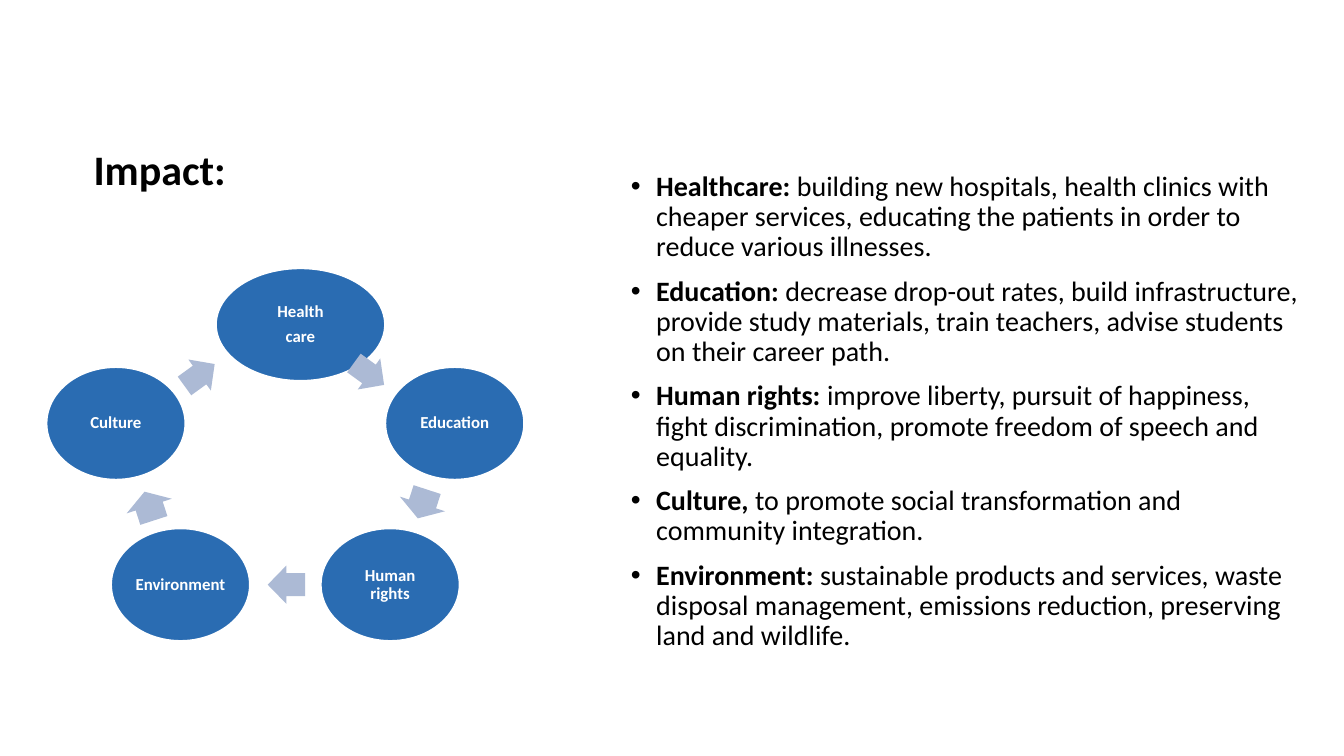
from dataclasses import dataclass

from lxml import etree
from pptx import Presentation
from pptx.dml.color import RGBColor
from pptx.enum.shapes import MSO_SHAPE
from pptx.enum.text import MSO_ANCHOR, PP_ALIGN
from pptx.oxml.ns import qn
from pptx.util import Inches, Pt

OVAL, ARROW = MSO_SHAPE.OVAL, MSO_SHAPE.RIGHT_ARROW
TOP, MIDDLE = MSO_ANCHOR.TOP, MSO_ANCHOR.MIDDLE
LEFT, CENTER = PP_ALIGN.LEFT, PP_ALIGN.CENTER

BLACK = RGBColor(0x00, 0x00, 0x00)
WHITE = RGBColor(0xFF, 0xFF, 0xFF)
BLUE = RGBColor(0x2A, 0x6C, 0xB2)
PALE_BLUE = RGBColor(0xAC, 0xBA, 0xD5)

FONT = "Calibri"
AREA_HEIGHT = 1.12
FIRST_ARROW_ANGLE = 36
ARROW_ANGLE_STEP = 72
SIDE_ARROW = (0.37, 0.38)
STEEP_ARROW = (0.3, 0.47)


@dataclass(frozen=True)
class ImpactArea:
    """An oval of the cycle and the arrow that leaves it."""
    lines: tuple[str, ...]
    center: tuple[float, float]
    arrow_center: tuple[float, float]
    arrow_size: tuple[float, float] = SIDE_ARROW
    width: float = 1.38


@dataclass(frozen=True)
class Effect:
    heading: str
    detail: str


AREAS = (
    ImpactArea(("Health", "care"), (2.98, 3.22), (3.66, 3.71), width=1.68),
    ImpactArea(("Education",), (4.51, 4.2), (4.19, 5.0), STEEP_ARROW),
    ImpactArea(("Human rights",), (3.87, 5.8), (2.84, 5.8)),
    ImpactArea(("Environment",), (1.79, 5.8), (1.48, 5.02), STEEP_ARROW),
    ImpactArea(("Culture",), (1.15, 4.2), (1.98, 3.72)),
)

EFFECTS = (
    Effect("Healthcare: ", "building new hospitals, health clinics with cheaper services, "
           "educating the patients in order to reduce various illnesses."),
    Effect("Education: ", "decrease drop-out rates, build infrastructure, provide study "
           "materials, train teachers, advise students on their career path."),
    Effect("Human rights: ", "improve liberty, pursuit of happiness, fight discrimination, "
           "promote freedom of speech and equality."),
    Effect("Culture, ", "to promote social transformation and community integration."),
    Effect("Environment: ", "sustainable products and services, waste disposal management, "
           "emissions reduction, preserving land and wildlife."),
)


def add_bullet(paragraph) -> None:
    properties = paragraph._p.get_or_add_pPr()
    properties.set("marL", str(Inches(0.25)))
    properties.set("indent", str(Inches(-0.25)))
    etree.SubElement(properties, qn("a:buFont")).set("typeface", "Arial")
    etree.SubElement(properties, qn("a:buChar")).set("char", "•")


def write(frame, paragraphs, *, size: float, color: RGBColor, align=LEFT, anchor=TOP,
          before: float = 0, after: float = 0, bullets: bool = False) -> None:
    """Fill a frame; each paragraph is a sequence of (text, bold) runs."""
    frame.word_wrap = True
    frame.vertical_anchor = anchor
    for index, runs in enumerate(paragraphs):
        paragraph = frame.add_paragraph() if index else frame.paragraphs[0]
        paragraph.alignment = align
        paragraph.line_spacing = 0.9
        paragraph.space_before = Pt(before if index else 0)
        paragraph.space_after = Pt(after)
        if bullets:
            add_bullet(paragraph)
        for text, bold in runs:
            run = paragraph.add_run()
            run.text = text
            run.font.name = FONT
            run.font.size = Pt(size)
            run.font.bold = bold
            run.font.color.rgb = color


def add_centered_shape(slide, kind, center: tuple[float, float],
                       size: tuple[float, float], fill: RGBColor):
    (x, y), (width, height) = center, size
    shape = slide.shapes.add_shape(kind, Inches(x - width / 2), Inches(y - height / 2),
                                   Inches(width), Inches(height))
    shape.shadow.inherit = False
    shape.fill.solid()
    shape.fill.fore_color.rgb = fill
    return shape


def add_area(slide, area: ImpactArea, arrow_angle: float) -> None:
    oval = add_centered_shape(slide, OVAL, area.center, (area.width, AREA_HEIGHT), BLUE)
    oval.line.color.rgb = WHITE
    oval.line.width = Pt(1.5)
    frame = oval.text_frame
    frame.margin_left = frame.margin_right = Inches(0.03)
    frame.margin_top = frame.margin_bottom = Inches(0.07)
    write(frame, [[(line, True)] for line in area.lines], size=12, color=WHITE,
          align=CENTER, anchor=MIDDLE, after=5)

    arrow = add_centered_shape(slide, ARROW, area.arrow_center, area.arrow_size, PALE_BLUE)
    arrow.line.fill.background()
    arrow.adjustments[0] = 0.6
    arrow.adjustments[1] = 0.5
    arrow.rotation = arrow_angle


def main() -> None:
    presentation = Presentation()
    presentation.slide_width = Inches(13.33)
    presentation.slide_height = Inches(7.5)
    slide = presentation.slides.add_slide(presentation.slide_layouts[6])

    title = slide.shapes.add_textbox(Inches(0.83), Inches(0.98), Inches(11.5), Inches(1.45))
    write(title.text_frame, [[("Impact:", True)]], size=30, color=BLACK, anchor=MIDDLE)

    effects = slide.shapes.add_textbox(Inches(6.16), Inches(1.66), Inches(6.9), Inches(4.19))
    write(effects.text_frame,
          [[(effect.heading, True), (effect.detail, False)] for effect in EFFECTS],
          size=20, color=BLACK, before=10, bullets=True)

    for index, area in enumerate(AREAS):
        add_area(slide, area, FIRST_ARROW_ANGLE + index * ARROW_ANGLE_STEP)

    presentation.save("out.pptx")


if __name__ == "__main__":
    main()
